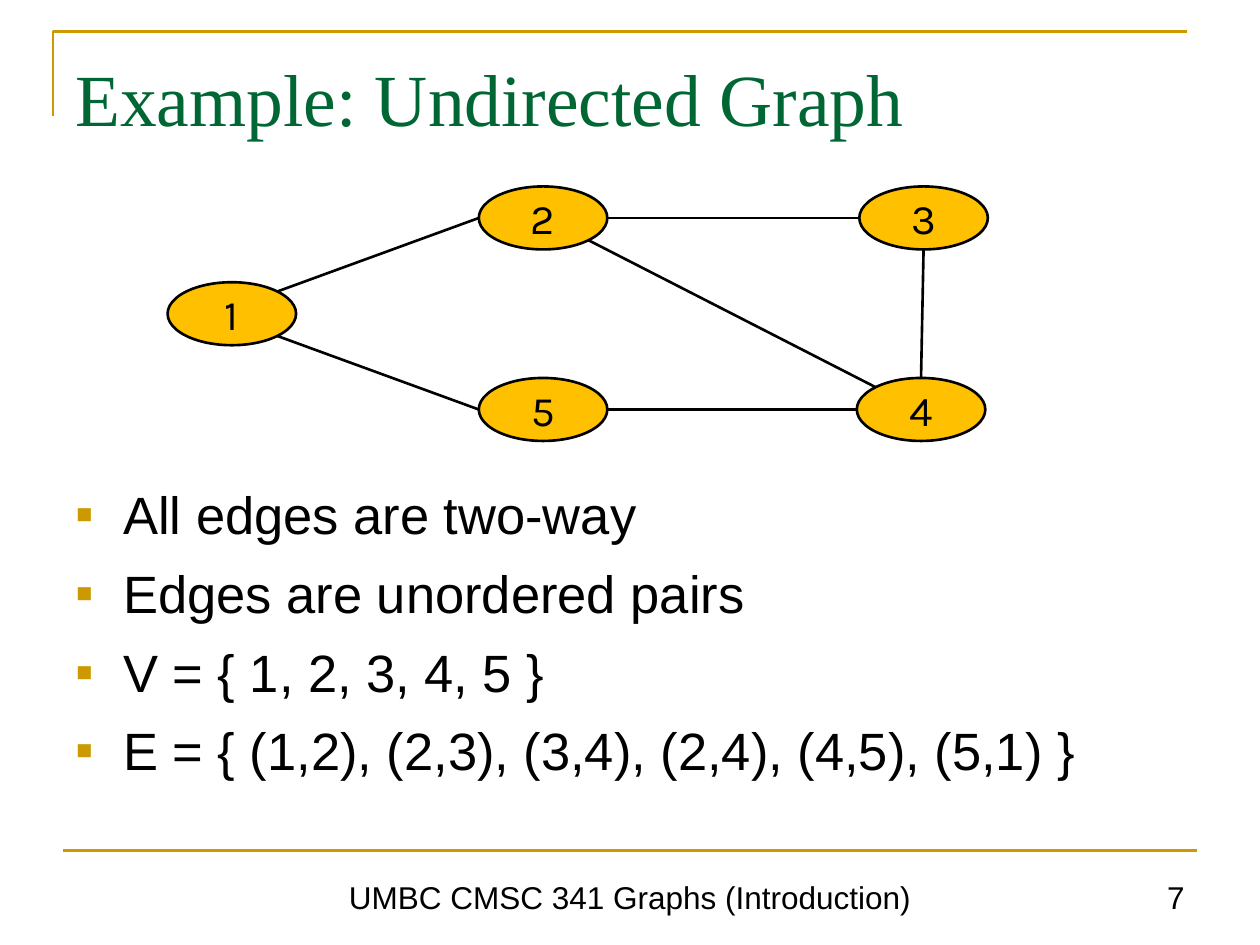
from lxml import etree
from pptx import Presentation
from pptx.dml.color import RGBColor
from pptx.enum import shapes, text
from pptx.oxml import ns
from pptx.util import Inches, Pt

GOLD, GREEN, AMBER, BLACK = "CC9900", "006633", "FFC000", "000000"
NODE_WIDTH, NODE_HEIGHT = 1.02, 0.5
DIAGONAL = 0.35
PORTS = {
    "top": (0, -0.5),
    "bottom": (0, 0.5),
    "left": (-0.5, 0),
    "right": (0.5, 0),
    "top left": (-DIAGONAL, -DIAGONAL),
    "top right": (DIAGONAL, -DIAGONAL),
    "bottom right": (DIAGONAL, DIAGONAL),
}
NODES = {
    "1": (1.33, 2.24),
    "2": (3.8, 1.48),
    "3": (6.82, 1.48),
    "4": (6.8, 3),
    "5": (3.8, 3),
}
EDGES = [
    ("1", "top right", "2", "left"),
    ("2", "right", "3", "left"),
    ("3", "bottom", "4", "top"),
    ("2", "bottom right", "4", "top left"),
    ("5", "right", "4", "left"),
    ("1", "bottom right", "5", "left"),
]
BULLETS = [
    "All edges are two-way",
    "Edges are unordered pairs",
    "V = { 1, 2, 3, 4, 5 }",
    "E = { (1,2), (2,3), (3,4), (2,4), (4,5), (5,1) }",
]


def color(value):
    return RGBColor.from_string(value)


def style_line(shape, value):
    shape.line.color.rgb = color(value)
    shape.line.width = Pt(1.5)


def style_paragraph(para, size, font="Arial", value=BLACK, align=text.PP_ALIGN.LEFT):
    para.alignment = align
    para.font.size = Pt(size)
    para.font.name = font
    para.font.color.rgb = color(value)


def add_text(page, lines, left, top, width, height, anchor, **style):
    box = page.shapes.add_textbox(
        Inches(left), Inches(top), Inches(width), Inches(height)
    )
    frame = box.text_frame
    frame.word_wrap = True
    frame.vertical_anchor = anchor
    frame.text = "\n".join(lines)
    for para in frame.paragraphs:
        style_paragraph(para, **style)
    return box


def add_bullets(box):
    for para in box.text_frame.paragraphs:
        para.space_before = Pt(9)
        properties = para._p.get_or_add_pPr()
        properties.set("marL", str(Inches(0.38)))
        properties.set("indent", str(-Inches(0.38)))
        bullet_color = etree.Element(ns.qn("a:buClr"))
        etree.SubElement(bullet_color, ns.qn("a:srgbClr"), val=GOLD)
        bullet_font = etree.Element(ns.qn("a:buFont"), typeface="Arial")
        bullet = etree.Element(ns.qn("a:buChar"), char="▪")
        default_font = properties.find(ns.qn("a:defRPr"))
        for element in (bullet_color, bullet_font, bullet):
            default_font.addprevious(element)


def add_line(page, start, end, value):
    ends = [Inches(length) for length in (*start, *end)]
    line = page.shapes.add_connector(shapes.MSO_CONNECTOR.STRAIGHT, *ends)
    style_line(line, value)
    etree.SubElement(line._element.spPr, ns.qn("a:effectLst"))


def add_corner(page):
    builder = page.shapes.build_freeform(Inches(0.42), Inches(0.92))
    builder.add_line_segments(
        [(Inches(0.42), Inches(0.25)), (Inches(9.42), Inches(0.25))], close=False
    )
    corner = builder.convert_to_shape()
    corner.shadow.inherit = False
    corner.fill.background()
    style_line(corner, GOLD)


def add_node(page, label, left, top):
    node = page.shapes.add_shape(
        shapes.MSO_SHAPE.OVAL,
        Inches(left), Inches(top), Inches(NODE_WIDTH), Inches(NODE_HEIGHT),
    )
    node.shadow.inherit = False
    node.fill.solid()
    node.fill.fore_color.rgb = color(AMBER)
    style_line(node, BLACK)
    frame = node.text_frame
    frame.word_wrap = False
    frame.vertical_anchor = text.MSO_ANCHOR.MIDDLE
    frame.text = label
    style_paragraph(frame.paragraphs[0], 24, "Karla", align=text.PP_ALIGN.CENTER)


def port_position(label, port):
    left, top = NODES[label]
    across, down = PORTS[port]
    return left + (0.5 + across) * NODE_WIDTH, top + (0.5 + down) * NODE_HEIGHT


def main():
    deck = Presentation()
    deck.slide_width, deck.slide_height = Inches(10), Inches(7.5)
    page = deck.slides.add_slide(deck.slide_layouts[6])
    top, bottom = text.MSO_ANCHOR.TOP, text.MSO_ANCHOR.BOTTOM

    add_corner(page)
    add_line(page, (0.5, 6.75), (9.5, 6.75), GOLD)
    add_text(page, ["Example: Undirected Graph"], 0.5, 0.37, 9, 1, top,
             size=42, font="Times New Roman", value=GREEN)
    add_bullets(add_text(page, BULLETS, 0.5, 3.7, 9, 2.55, bottom, size=30))
    add_text(page, ["UMBC CMSC 341 Graphs (Introduction)"], 1.75, 6.83, 6.5, 0.49,
             bottom, size=18, align=text.PP_ALIGN.CENTER)
    add_text(page, ["7"], 7.17, 6.83, 2.33, 0.49, bottom,
             size=18, align=text.PP_ALIGN.RIGHT)

    for label, position in NODES.items():
        add_node(page, label, *position)
    for first, first_port, second, second_port in EDGES:
        add_line(page, port_position(first, first_port),
                 port_position(second, second_port), BLACK)

    deck.save("out.pptx")


if __name__ == "__main__":
    main()
